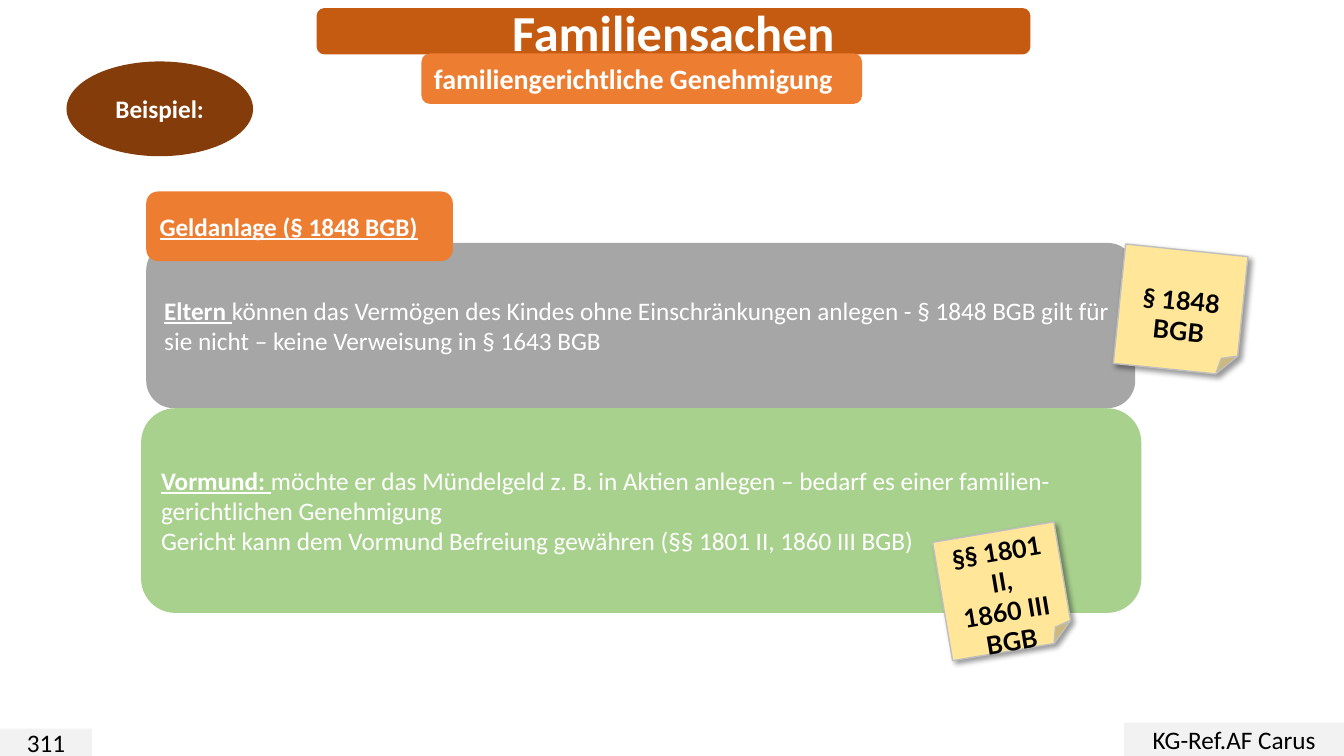
from lxml import etree
from pptx import Presentation
from pptx import util as u
from pptx.dml.color import RGBColor
from pptx.enum import shapes, text
from pptx.oxml.ns import qn

COLORS = {
    "rust": "C55A11", "orange": "ED7D31", "brown": "843C0B",
    "gray": "A6A6A6", "green": "A9D18E", "footer": "F2F2F2",
    "note": "FFE699", "note_edge": "BFBFBF", "white": "FFFFFF", "black": "000000",
}
ROUND = shapes.MSO_SHAPE.ROUNDED_RECTANGLE
RECT = shapes.MSO_SHAPE.RECTANGLE
OVAL = shapes.MSO_SHAPE.OVAL
NOTE = shapes.MSO_SHAPE.FOLDED_CORNER
LEFT, CENTER = text.PP_ALIGN.LEFT, text.PP_ALIGN.CENTER

# Boxes are left, top, width, height in percent of the slide.
# Text: paragraphs, each a list of (words, style); b = bold, u = underlined.
TITLE = (ROUND, (23.56, 1.07, 53.11, 6.13), "rust", CENTER, 36, [[("Familiensachen", "b")]])
PAGE = (RECT, (0, 96.4, 6.83, 3.6), "footer", CENTER, 18, [[("311", "")]])
AUTHOR = (RECT, (83.65, 95.6, 16.35, 4.4), "footer", CENTER, 18, [[("KG-Ref.AF Carus", "")]])
SUBTITLE = (ROUND, (31.36, 7.07, 32.78, 6.67), "orange", LEFT, 20,
            [[("familiengerichtliche Genehmigung", "b")]])
PARENTS = (ROUND, (10.88, 32.13, 73.59, 21.87), "gray", LEFT, 18, [
    [("Eltern ", "bu"),
     ("können das Vermögen des Kindes ohne Einschränkungen anlegen - § 1848 BGB gilt für "
      "sie nicht – keine Verweisung in § 1643 BGB", "")]])
GUARDIAN = (ROUND, (10.5, 54, 74.42, 27.07), "green", LEFT, 18, [
    [("Vormund: ", "bu"),
     ("möchte er das Mündelgeld z. B. in Aktien anlegen – bedarf es einer "
      "familien-gerichtlichen Genehmigung", "")],
    [("Gericht kann dem Vormund Befreiung gewähren (§§ 1801 II, 1860 III BGB)", "")]])
TOPIC = (ROUND, (10.88, 25.33, 22.81, 9.2), "orange", LEFT, 18,
         [[("Geldanlage (§ 1848 BGB)", "bu")]])
EXAMPLE = (OVAL, (4.95, 8.13, 13.88, 12.53), "brown", CENTER, 18, [[("Beispiel:", "b")]])

NOTE_SIZE = (9.15, 15.87)
PARENTS_NOTE = ((83.27, 33.07), 5.9, ["§ 1848", "BGB"])
GUARDIAN_NOTE = ((70.07, 70.27), -9.6, ["§§ 1801 II,", "1860 III", "BGB"])

prs = Presentation()
prs.slide_width, prs.slide_height = u.Inches(13.33), u.Inches(7.5)
s = prs.slides.add_slide(prs.slide_layouts[6])


def rgb(name):
    return RGBColor.from_string(COLORS[name])


def add_box(kind, box, fill, align, size, paragraphs, font="Calibri"):
    spans = (prs.slide_width, prs.slide_height) * 2
    sp = s.shapes.add_shape(kind, *(int(span * share / 100) for span, share in zip(spans, box)))
    sp.shadow.inherit = False
    sp.fill.solid()
    sp.fill.fore_color.rgb = rgb(fill)
    sp.line.fill.background()
    tf = sp.text_frame
    tf.word_wrap = True
    tf.vertical_anchor = text.MSO_ANCHOR.MIDDLE
    ink = "black" if fill in ("footer", "note") else "white"
    for i, runs in enumerate(paragraphs):
        p = tf.add_paragraph() if i else tf.paragraphs[0]
        p.alignment = align
        for words, style in runs:
            r = p.add_run()
            r.text = words
            r.font.name, r.font.size = font, u.Pt(size)
            r.font.bold, r.font.underline = "b" in style, "u" in style
            r.font.color.rgb = rgb(ink)
    return sp


def add_note(corner, angle, lines):
    sp = add_box(NOTE, corner + NOTE_SIZE, "note", CENTER, 18,
                 [[(line, "b")] for line in lines], "Lato")
    sp.rotation = angle
    sp.line.color.rgb = rgb("note_edge")
    sp.line.width = u.Pt(1)
    sp.text_frame.margin_top = u.Inches(0.35)
    effects = sp.element.spPr.find(qn("a:effectLst"))
    shadow = etree.SubElement(effects, qn("a:outerShdw"), blurRad=str(u.Pt(4)),
                              dist=str(u.Pt(3)), dir=str(45 * 60000),
                              algn="tl", rotWithShape="0")
    color = etree.SubElement(shadow, qn("a:srgbClr"), val=COLORS["black"])
    etree.SubElement(color, qn("a:alpha"), val="40000")


for item in (TITLE, PAGE, AUTHOR, SUBTITLE, PARENTS):
    add_box(*item)
add_note(*PARENTS_NOTE)
for item in (GUARDIAN, TOPIC):
    add_box(*item)
add_note(*GUARDIAN_NOTE)
add_box(*EXAMPLE)

prs.save("out.pptx")
